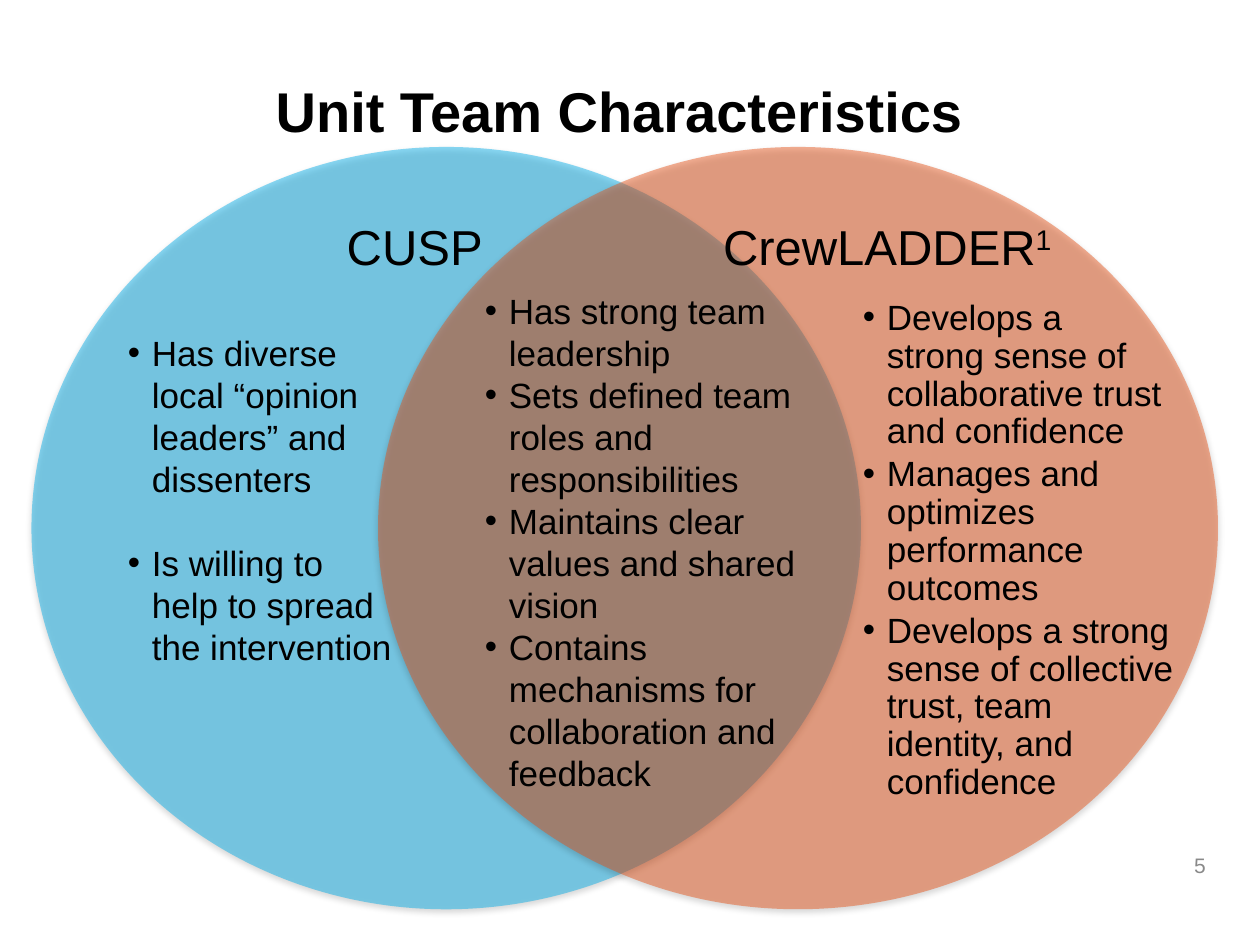
from dataclasses import dataclass

from lxml.etree import SubElement
from pptx import Presentation
from pptx.dml.color import RGBColor
from pptx.enum.shapes import MSO_SHAPE
from pptx.enum.text import MSO_ANCHOR, PP_ALIGN
from pptx.oxml.ns import qn
from pptx.util import Inches, Pt


@dataclass(frozen=True)
class Theme:
    font: str = "Arial"
    ink: str = "000000"
    muted: str = "898989"
    cusp: str = "00ACE8"
    partner: str = "E65014"
    opacity: int = 46
    title: int = 32
    heading: int = 28
    body: int = 20
    small: int = 12


CELL = 1 / 12  # the grid has 120 columns and 90 rows on a 10 x 7.5 inch page


class TeamSlide:
    def __init__(self, deck, theme):
        self.theme = theme
        self.page = deck.slides.add_slide(deck.slide_layouts[5])

    def place(self, *cells):
        return [Inches(cell * CELL) for cell in cells]

    def style(self, font, size, color=None, bold=False):
        values = {"name": self.theme.font, "size": Pt(size), "bold": bold}
        for name, value in values.items():
            setattr(font, name, value)
        font.color.rgb = RGBColor.from_string(color or self.theme.ink)

    def title(self, text, *cells):
        box = self.page.shapes.title
        for name, value in zip(("left", "top", "width", "height"), self.place(*cells)):
            setattr(box, name, value)
        box.text_frame.text = text
        box.text_frame.vertical_anchor = MSO_ANCHOR.MIDDLE
        para = box.text_frame.paragraphs[0]
        para.alignment = PP_ALIGN.CENTER
        self.style(para.runs[0].font, self.theme.title, bold=True)

    def circle(self, color, *cells):
        shape = self.page.shapes.add_shape(MSO_SHAPE.OVAL, *self.place(*cells))
        shape.fill.solid()
        shape.fill.fore_color.rgb = RGBColor.from_string(color)
        shape.line.fill.background()
        shape.shadow.inherit = False
        # Transparent fill and a soft shadow straight below
        properties = shape.fill._xPr
        tint = properties.find(qn("a:solidFill"))[0]
        SubElement(tint, qn("a:alpha"), val=str(self.theme.opacity * 1000))
        shadow = SubElement(
            properties.find(qn("a:effectLst")), qn("a:outerShdw"),
            blurRad=str(Pt(3.5)), dist=str(Pt(2.2)), dir="5400000", rotWithShape="0")
        shade = SubElement(shadow, qn("a:srgbClr"), val=self.theme.ink)
        SubElement(shade, qn("a:alpha"), val="32000")

    def frame(self, *cells):
        box = self.page.shapes.add_textbox(*self.place(*cells))
        box.text_frame.word_wrap = True
        return box.text_frame

    def label(self, text, size, *cells, color=None, align=PP_ALIGN.CENTER,
              anchor=MSO_ANCHOR.TOP, raised=""):
        frame = self.frame(*cells)
        frame.vertical_anchor = anchor
        para = frame.paragraphs[0]
        para.alignment = align
        for part in filter(None, (text, raised)):
            span = para.add_run()
            span.text = part
            self.style(span.font, size, color)
        if raised:
            span.font._element.set("baseline", "30000")

    def bullets(self, items, *cells, before=0, after=0, spacing=1.0):
        frame = self.frame(*cells)
        for index, item in enumerate(items):
            para = frame.add_paragraph() if index else frame.paragraphs[0]
            para.text = item
            values = {"space_before": Pt(before if index else 0),
                      "space_after": Pt(after), "line_spacing": spacing}
            for name, value in values.items():
                setattr(para, name, value)
            properties = para._p.get_or_add_pPr()
            properties.set("marL", str(Inches(0.19)))
            properties.set("indent", str(Inches(-0.19)))
            SubElement(properties, qn("a:buFont"), typeface=self.theme.font)
            SubElement(properties, qn("a:buChar"), char="•")
            self.style(para.font, self.theme.body)
            for span in para.runs:
                self.style(span.font, self.theme.body)


def main():
    deck = Presentation()
    deck.slide_width, deck.slide_height = Inches(10), Inches(7.5)
    theme = Theme()
    slide = TeamSlide(deck, theme)

    # Title and page number
    slide.title("Unit Team Characteristics", 4, 3, 110, 15)
    slide.label("5", theme.small, 88, 80, 28, 4.8, color=theme.muted,
                align=PP_ALIGN.RIGHT, anchor=MSO_ANCHOR.MIDDLE)

    # Overlapping circles
    slide.circle(theme.cusp, 3, 14, 79, 72.6)
    slide.circle(theme.partner, 36, 14, 80, 72.6)

    # Circle headings
    slide.label("CUSP", theme.heading, 30, 20, 19, 6.8)
    slide.label("CrewLADDER", theme.heading, 65, 20, 39, 6.8, raised="1")

    # Traits of each side and of the overlap
    slide.bullets([
        "Develops a\vstrong sense of collaborative trust and confidence",
        "Manages and optimizes performance outcomes",
        "Develops a strong sense of collective trust, team identity, and confidence",
    ], 81, 28, 32, 53.5, after=3, spacing=0.9)
    slide.bullets([
        "Has diverse local “opinion leaders” and dissenters",
        "Is willing to help to spread the intervention",
    ], 11, 31, 28, 33.5, before=24)
    slide.bullets([
        "Has strong team leadership",
        "Sets defined team roles and responsibilities",
        "Maintains clear values and shared vision",
        "Contains mechanisms for collaboration and feedback",
    ], 45, 27, 32, 49.7)

    deck.save("out.pptx")


if __name__ == "__main__":
    main()
